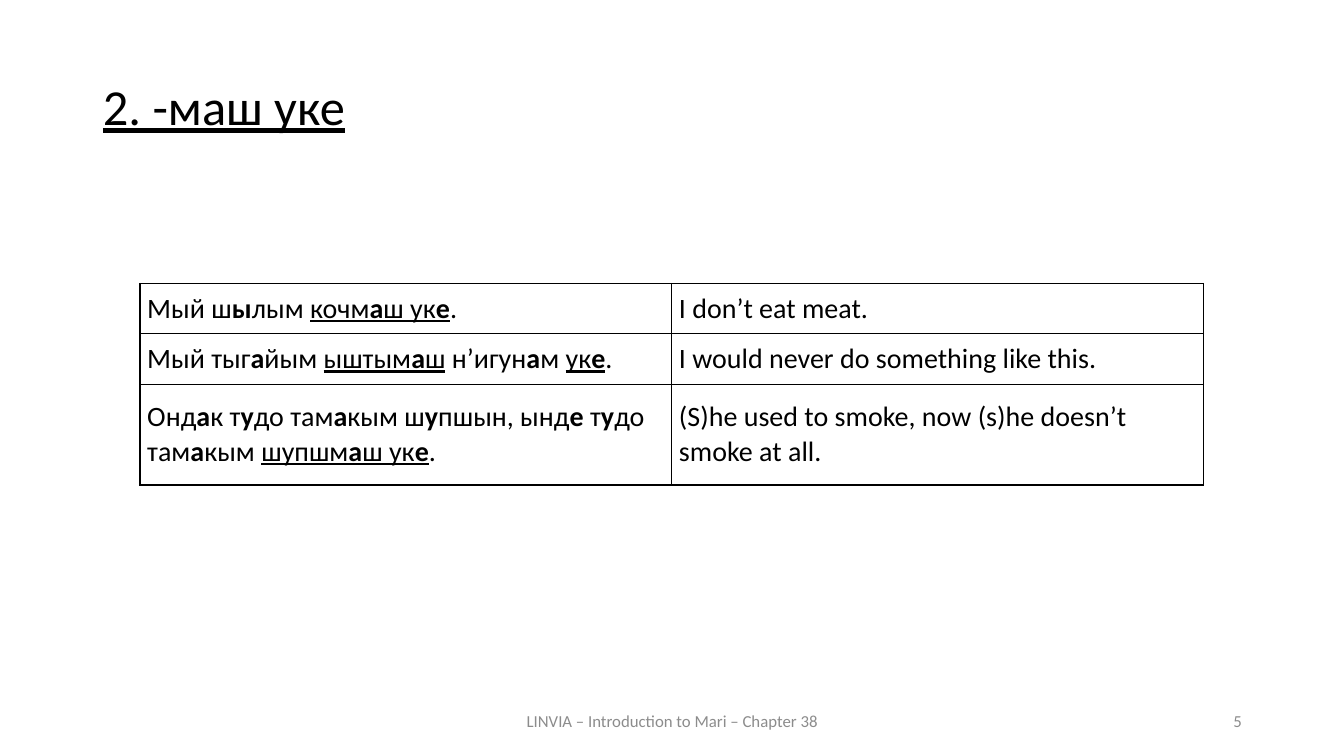
from dataclasses import dataclass
from itertools import product

from lxml.etree import SubElement
from pptx import Presentation
from pptx.dml.color import RGBColor
from pptx.enum.text import MSO_ANCHOR as Anchor, MSO_AUTO_SIZE as AutoSize, PP_ALIGN as Align
from pptx.oxml.ns import qn
from pptx.util import Cm, Pt


@dataclass(frozen=True)
class Theme:
    font: str = "Calibri"
    ink: str = "000000"
    muted: str = "8C8C8C"
    title_size: int = 36
    table_size: int = 20
    footer_size: int = 12
    border_width: int = 1


theme = Theme()


def write_text(frame, text, size, color=theme.ink, align=Align.LEFT, anchor=Anchor.MIDDLE):
    """Fill the frame with one paragraph; * toggles bold and _ toggles underline."""
    frame.word_wrap = True
    frame.vertical_anchor = anchor
    paragraph = frame.paragraphs[0]
    paragraph.alignment = align
    underlined = bold = False
    for underline_part in text.split("_"):
        for index, piece in enumerate(underline_part.split("*")):
            if index:
                bold = not bold
            if piece:
                run = paragraph.add_run()
                run.text = piece
                run.font.name = theme.font
                run.font.size = Pt(size)
                run.font.bold = bold
                run.font.underline = underlined
                run.font.color.rgb = RGBColor.from_string(color)
        underlined = not underlined
    return paragraph


def add_borders(cell):
    properties = cell._tc.get_or_add_tcPr()
    for side in ("lnL", "lnR", "lnT", "lnB"):
        line = SubElement(properties, qn(f"a:{side}"), w=str(Pt(theme.border_width)))
        fill = SubElement(line, qn("a:solidFill"))
        SubElement(fill, qn("a:srgbClr"), val=theme.ink)


presentation = Presentation()
presentation.slide_width = Cm(33.87)
presentation.slide_height = Cm(19.05)
slide = presentation.slides.add_slide(presentation.slide_layouts[5])

# Title
title = slide.shapes.title
title.left, title.top, title.width, title.height = Cm(2.34), Cm(1.93), Cm(29.21), Cm(2.11)
title.text_frame.auto_size = AutoSize.NONE
heading = write_text(title.text_frame, "_2. -маш уке_", theme.title_size,
                     align=Align.JUSTIFY, anchor=Anchor.TOP)
heading.line_spacing = 0.9
heading.space_before = Pt(12)

# Example sentences with translations
examples = [
    ("Мый ш*ы*лым _кочм*а*ш ук*е*_.", "I don’t eat meat."),
    ("Мый тыг*а*йым _ыштым*а*ш_ н’игун*а*м _ук*е*_.",
     "I would never do something like this."),
    ("Онд*а*к т*у*до там*а*кым ш*у*пшын, ынд*е* т*у*до там*а*кым _шупшм*а*ш ук*е*_.",
     "(S)he used to smoke, now (s)he doesn’t smoke at all."),
]
row_heights = [1.27, 1.27, 2.54]
column_width = 13.4
table = slide.shapes.add_table(
    len(examples), 2, Cm(3.53), Cm(7.14), Cm(2 * column_width), Cm(sum(row_heights))).table
table.first_row = table.horz_banding = False
for column in table.columns:
    column.width = Cm(column_width)
for row, height in zip(table.rows, row_heights):
    row.height = Cm(height)
for row_index, column_index in product(range(len(examples)), range(2)):
    cell = table.cell(row_index, column_index)
    cell.margin_left = cell.margin_right = Cm(0.18)
    cell.margin_top = cell.margin_bottom = 0
    cell.vertical_anchor = Anchor.MIDDLE
    add_borders(cell)
    cell.fill.background()
    write_text(cell.text_frame, examples[row_index][column_index], theme.table_size)

# Footer and slide number
footers = [
    ("LINVIA – Introduction to Mari – Chapter 38", 11.23, 11.43, Align.CENTER),
    ("5", 23.93, 7.62, Align.RIGHT),
]
for text, left, width, align in footers:
    footer = slide.shapes.add_textbox(Cm(left), Cm(17.65), Cm(width), Cm(1.02))
    write_text(footer.text_frame, text, theme.footer_size, color=theme.muted, align=align)

presentation.save("out.pptx")
